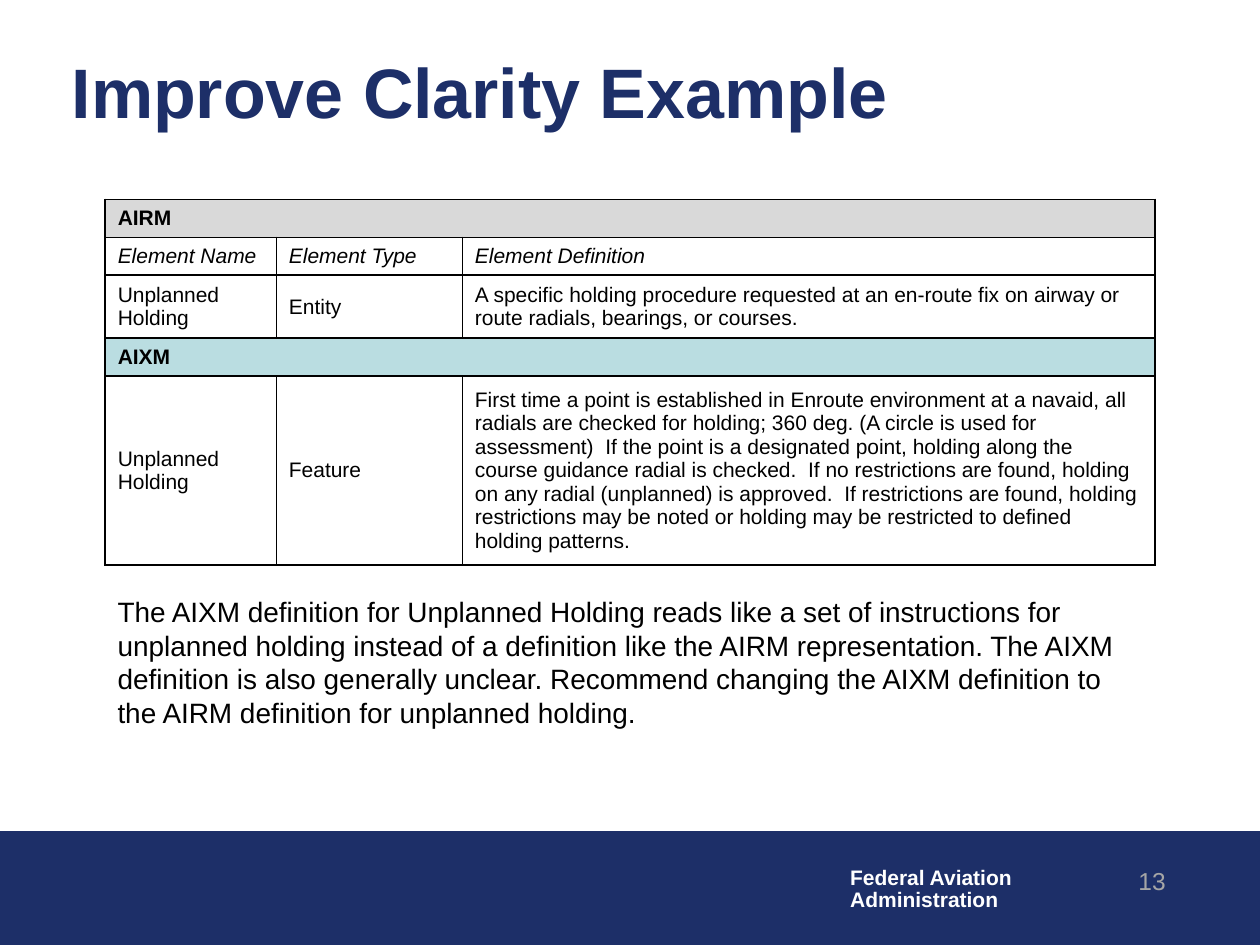
from lxml.etree import SubElement
from pptx import Presentation
from pptx.dml.color import RGBColor
from pptx.enum.shapes import MSO_SHAPE
from pptx.enum.text import MSO_ANCHOR, PP_ALIGN
from pptx.oxml.ns import qn
from pptx.util import Cm, Pt

NAVY = RGBColor(0x1D, 0x2F, 0x68)
WHITE = RGBColor(0xFF, 0xFF, 0xFF)
BLACK = RGBColor(0, 0, 0)
GRAY = RGBColor(0xA6, 0xA6, 0xA6)
AIRM_FILL = RGBColor(0xD9, 0xD9, 0xD9)
AIXM_FILL = RGBColor(0xBA, 0xDD, 0xE1)

COLUMN_WIDTHS = [3.45, 3.75, 13.96]
ROW_HEIGHTS = [0.73, 0.73, 1.2, 0.73, 3.59]
SECTION_FILLS = {"AIRM": AIRM_FILL, "AIXM": AIXM_FILL}
HEADER_ROW = 1
DEFINITIONS = [
    ["AIRM"],
    ["Element Name", "Element Type", "Element Definition"],
    ["Unplanned Holding", "Entity",
     "A specific holding procedure requested at an en-route fix on airway or "
     "route radials, bearings, or courses."],
    ["AIXM"],
    ["Unplanned Holding", "Feature",
     "First time a point is established in Enroute environment at a navaid, all "
     "radials are checked for holding; 360 deg. (A circle is used for "
     "assessment)  If the point is a designated point, holding along the course "
     "guidance radial is checked.  If no restrictions are found, holding on any "
     "radial (unplanned) is approved.  If restrictions are found, holding "
     "restrictions may be noted or holding may be restricted to defined "
     "holding patterns."],
]
RECOMMENDATION = (
    "The AIXM definition for Unplanned Holding reads like a set of instructions "
    "for unplanned holding instead of a definition like the AIRM representation. "
    "The AIXM definition is also generally unclear. Recommend changing the AIXM "
    "definition to the AIRM definition for unplanned holding.")


def style(paragraph, size, color, bold=False, italic=False):
    font = paragraph.font
    font.name, font.size = "Arial", Pt(size)
    font.bold, font.italic = bold, italic
    font.color.rgb = color


def add_text(slide, left, top, width, height, lines, size, color,
             bold=False, align=PP_ALIGN.LEFT, spacing=None):
    frame = slide.shapes.add_textbox(
        Cm(left), Cm(top), Cm(width), Cm(height)).text_frame
    frame.word_wrap = True
    frame.text = "\n".join(lines)
    for paragraph in frame.paragraphs:
        paragraph.alignment = align
        paragraph.line_spacing = spacing
        style(paragraph, size, color, bold)


def add_title(slide, left, top, width, height):
    title = slide.shapes.title
    title.left, title.top = Cm(left), Cm(top)
    title.width, title.height = Cm(width), Cm(height)
    frame = title.text_frame
    frame.text = "Improve Clarity Example"
    frame.vertical_anchor = MSO_ANCHOR.MIDDLE
    frame.paragraphs[0].alignment = PP_ALIGN.LEFT
    style(frame.paragraphs[0], 40, NAVY, bold=True)


def add_borders(cell):
    properties = cell._tc.get_or_add_tcPr()
    for side in ("a:lnL", "a:lnR", "a:lnT", "a:lnB"):
        line = SubElement(properties, qn(side), w=str(Pt(1)))
        fill = SubElement(line, qn("a:solidFill"))
        SubElement(fill, qn("a:srgbClr"), val=str(BLACK))


def add_definitions(slide, left, top):
    table = slide.shapes.add_table(
        len(ROW_HEIGHTS), len(COLUMN_WIDTHS), Cm(left), Cm(top),
        Cm(sum(COLUMN_WIDTHS)), Cm(sum(ROW_HEIGHTS))).table
    for column, width in zip(table.columns, COLUMN_WIDTHS):
        column.width = Cm(width)
    for index, (row, height, texts) in enumerate(
            zip(table.rows, ROW_HEIGHTS, DEFINITIONS)):
        row.height = Cm(height)
        section_fill = SECTION_FILLS.get(texts[0])
        for cell in row.cells:
            add_borders(cell)
            cell.fill.solid()
            cell.fill.fore_color.rgb = section_fill or WHITE
        # A section row spans the whole table
        if section_fill:
            row.cells[0].merge(row.cells[len(COLUMN_WIDTHS) - 1])
        for cell, text in zip(row.cells, texts):
            cell.text = text
            cell.vertical_anchor = MSO_ANCHOR.MIDDLE
            style(cell.text_frame.paragraphs[0], 12, BLACK,
                  bold=section_fill is not None, italic=index == HEADER_ROW)


def add_footer(slide, left, top, width, height):
    band = slide.shapes.add_shape(
        MSO_SHAPE.RECTANGLE, Cm(left), Cm(top), Cm(width), Cm(height))
    band.shadow.inherit = False
    band.fill.solid()
    band.fill.fore_color.rgb = NAVY
    band.line.color.rgb = NAVY
    band.line.width = Pt(0.75)
    # Agency name and page number
    add_text(slide, left + 16.89, top + 0.63, 4, 1.12,
             ["Federal Aviation", "Administration"], 12, WHITE,
             bold=True, spacing=0.85)
    add_text(slide, left + 20.7, top + 0.58, 3.05, 1.27, ["13"], 14, GRAY,
             align=PP_ALIGN.RIGHT)


def main():
    deck = Presentation()
    deck.slide_width, deck.slide_height = Cm(25.4), Cm(19.05)
    slide = deck.slides.add_slide(deck.slide_layouts[5])
    add_footer(slide, 0, 16.76, 25.4, 2.27)
    add_title(slide, 1.19, 0.97, 23.55, 1.7)
    add_text(slide, 2.12, 11.86, 21.16, 3.18, [RECOMMENDATION], 16, BLACK)
    add_definitions(slide, 2.12, 4.02)
    deck.save("out.pptx")


if __name__ == "__main__":
    main()
